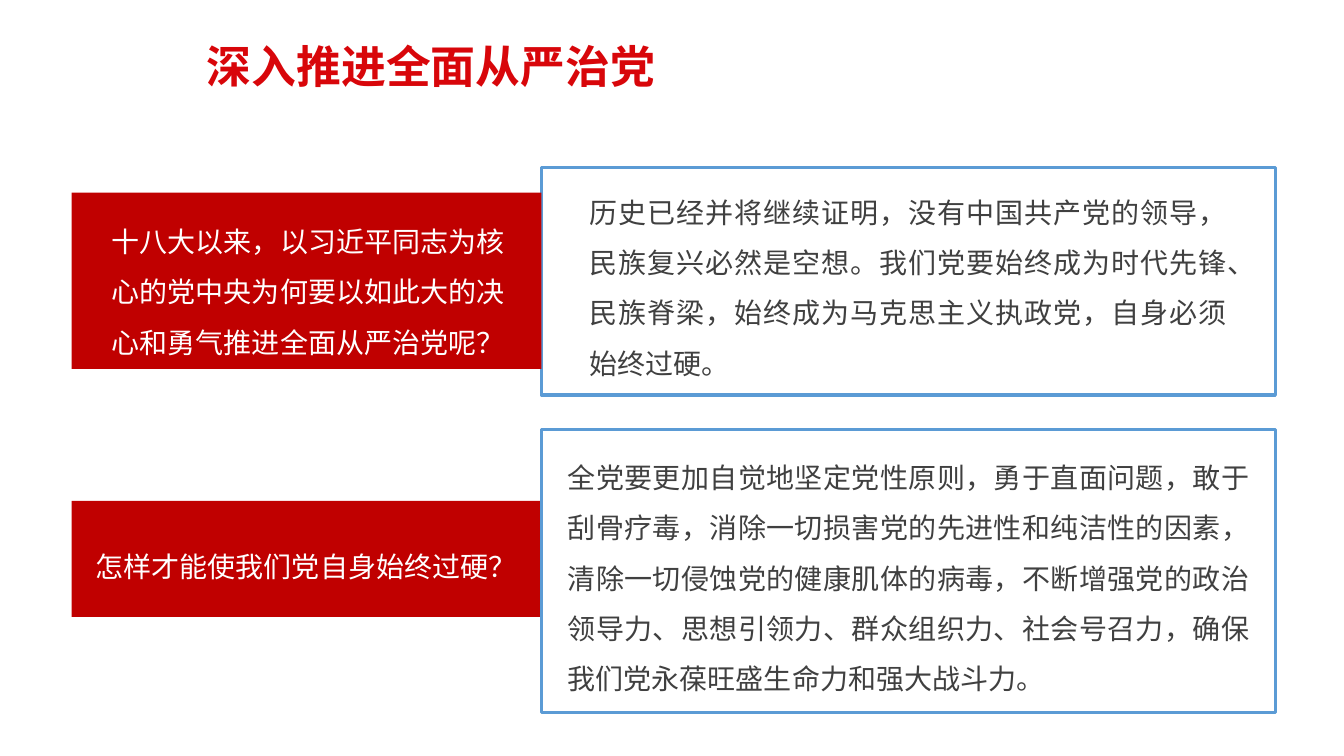
from lxml.etree import SubElement
from pptx import Presentation
from pptx.dml.color import RGBColor
from pptx.enum.lang import MSO_LANGUAGE_ID as Lang
from pptx.enum.shapes import MSO_SHAPE as Shape
from pptx.enum.text import MSO_ANCHOR as Anchor, PP_ALIGN as Align
from pptx.oxml.ns import qn
from pptx.util import Emu, Pt

PX = 9144
FONT = "Noto Sans CJK SC"
COLORS = {"title": "D8060A", "panel": "C00000", "frame": "5B9BD5",
          "question": "FFFFFF", "answer": "404040"}


def px(*lengths):
    return [Emu(length * PX) for length in lengths]


def color(name):
    return RGBColor.from_string(COLORS[name])


def write(frame, text, *, ink, size=20, bold=False, align=Align.LEFT,
          spacing=1.5, side=10):
    frame.word_wrap = True
    frame.vertical_anchor = Anchor.TOP
    frame.margin_left, frame.margin_right = px(side, side)
    frame.margin_top, frame.margin_bottom = px(5, 5)
    paragraph = frame.paragraphs[0]
    paragraph.alignment = align
    paragraph.line_spacing = spacing
    run = paragraph.add_run()
    run.text = text
    font = run.font
    font.name, font.size, font.bold = FONT, Pt(size), bold
    font.color.rgb = color(ink)
    font.language_id = Lang.SIMPLIFIED_CHINESE
    SubElement(font._element, qn("a:ea"), typeface=FONT)


def add_title(slide, box, text):
    title = slide.shapes.title
    title.left, title.top, title.width, title.height = px(*box)
    write(title.text_frame, text, ink="title", size=32, bold=True, spacing=1.0)


def add_panel(slide, box):
    panel = slide.shapes.add_shape(Shape.RECTANGLE, *px(*box))
    panel.shadow.inherit = False
    panel.fill.solid()
    panel.fill.fore_color.rgb = color("panel")
    panel.line.fill.background()


def add_frame(slide, box):
    border = slide.shapes.add_shape(Shape.RECTANGLE, *px(*box))
    border.shadow.inherit = False
    border.fill.background()
    border.line.color.rgb = color("frame")
    border.line.width = Pt(2.25)


def add_text(slide, box, text, **style):
    write(slide.shapes.add_textbox(*px(*box)).text_frame, text, **style)


def add_question(slide, panel_box, text_box, text):
    add_panel(slide, panel_box)
    add_text(slide, text_box, text, ink="question")


def add_answer(slide, box, text):
    add_text(slide, box, text, ink="answer", align=Align.JUSTIFY, side=11)


def main():
    deck = Presentation()
    deck.slide_width, deck.slide_height = px(1333, 750)
    slide = deck.slides.add_slide(deck.slide_layouts[5])

    add_title(slide, (195, 33, 845, 64), "深入推进全面从严治党")

    add_frame(slide, (537, 166, 728, 226))
    add_question(slide, (71, 191, 466, 175), (101, 201, 412, 156),
                 "十八大以来，以习近平同志为核心的党中央为何要以如此大的决心和勇气"
                 "推进全面从严治党呢？")
    add_answer(slide, (574, 172, 654, 213),
               "历史已经并将继续证明，没有中国共产党的领导，民族复兴必然是空想。"
               "我们党要始终成为时代先锋、民族脊梁，始终成为马克思主义执政党，"
               "自身必须始终过硬。")

    add_question(slide, (71, 497, 466, 115), (85, 524, 439, 61),
                 "怎样才能使我们党自身始终过硬？")
    add_frame(slide, (537, 426, 728, 281))
    add_answer(slide, (552, 435, 698, 263),
               "全党要更加自觉地坚定党性原则，勇于直面问题，敢于刮骨疗毒，"
               "消除一切损害党的先进性和纯洁性的因素，清除一切侵蚀党的健康肌体的病毒，"
               "不断增强党的政治领导力、思想引领力、群众组织力、社会号召力，"
               "确保我们党永葆旺盛生命力和强大战斗力。")

    deck.save("out.pptx")


if __name__ == "__main__":
    main()
